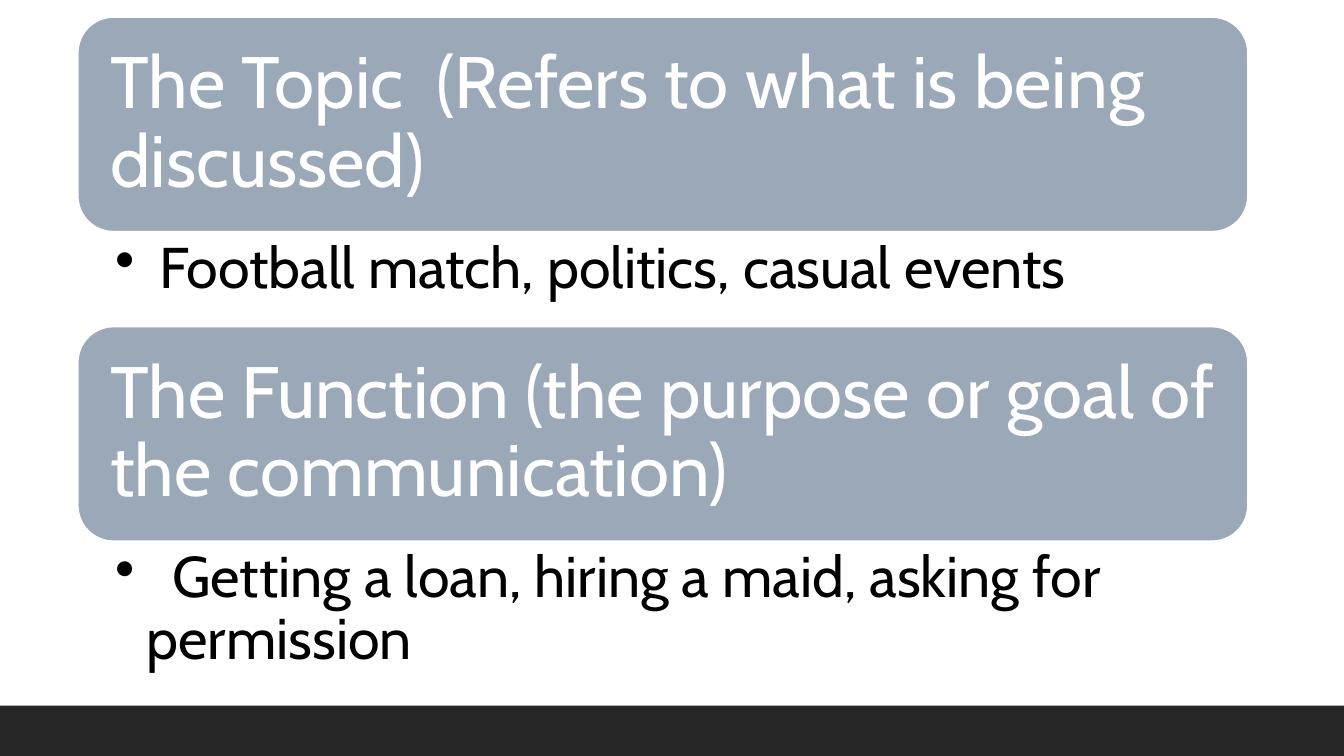
from dataclasses import dataclass

from lxml import etree
from pptx import Presentation
from pptx.dml.color import RGBColor
from pptx.enum.shapes import MSO_SHAPE
from pptx.enum.text import MSO_ANCHOR, PP_ALIGN
from pptx.oxml.ns import qn
from pptx.slide import Slide
from pptx.text.text import TextFrame
from pptx.util import Cm, Pt

RECT = MSO_SHAPE.RECTANGLE
ROUND = MSO_SHAPE.ROUNDED_RECTANGLE
TOP = MSO_ANCHOR.TOP
MIDDLE = MSO_ANCHOR.MIDDLE
LEFT = PP_ALIGN.LEFT


@dataclass(frozen=True)
class Theme:
    font: str = "Cabin"
    head_size: int = 52
    body_size: int = 41
    white: RGBColor = RGBColor(0xFF, 0xFF, 0xFF)
    black: RGBColor = RGBColor(0, 0, 0)
    panel: RGBColor = RGBColor(0x9B, 0xA8, 0xB7)
    footer: RGBColor = RGBColor(0x26, 0x26, 0x26)


@dataclass(frozen=True)
class Section:
    head: str
    body: str
    depth: float  # height of the body text in cm


THEME = Theme()
WIDE, HIGH = 33.87, 19.05
BAR = 1.27
SIDE, SPAN = 1.96, 29.49
START, PANEL = 0.43, 5.41
HANG = 0.79

SECTIONS = [
    Section("The Topic  (Refers to what is being discussed)",
            " Football match, politics, casual events", 2.39),
    Section("The Function (the purpose or goal of the communication)",
            "  Getting a loan, hiring a maid, asking for permission", 3.35),
]


def set_text(frame: TextFrame, text: str, size: int, color: RGBColor,
             anchor: MSO_ANCHOR, pads: tuple[float, float, float]) -> None:
    """Fill a frame; pads are left, right and vertical in cm."""
    left, right, edge = pads
    frame.word_wrap = True
    frame.vertical_anchor = anchor
    frame.margin_left, frame.margin_right = Cm(left), Cm(right)
    frame.margin_top = frame.margin_bottom = Cm(edge)
    frame.text = text
    para = frame.paragraphs[0]
    para.alignment = LEFT
    para.line_spacing = 0.9
    font = para.runs[0].font
    font.name, font.size = THEME.font, Pt(size)
    font.color.rgb = color


def add_bullet(frame: TextFrame) -> None:
    props = frame.paragraphs[0]._p.get_or_add_pPr()
    props.set("marL", str(Cm(HANG)))
    props.set("indent", str(-Cm(HANG)))
    etree.SubElement(props, qn("a:buChar")).set("char", "•")


def add_bar(slide: Slide) -> None:
    bar = slide.shapes.add_shape(RECT, 0, Cm(HIGH - BAR), Cm(WIDE), Cm(BAR))
    bar.shadow.inherit = False
    bar.fill.solid()
    bar.fill.fore_color.rgb = THEME.footer
    bar.line.fill.background()


def add_section(slide: Slide, part: Section, top: float) -> float:
    """Draw a panel with its bullet and return the next top in cm."""
    panel = slide.shapes.add_shape(ROUND, Cm(SIDE), Cm(top), Cm(SPAN), Cm(PANEL))
    panel.shadow.inherit = False
    panel.fill.solid()
    panel.fill.fore_color.rgb = THEME.panel
    panel.line.color.rgb = THEME.white
    panel.line.width = Pt(1.25)
    set_text(panel.text_frame, part.head, THEME.head_size, THEME.white,
             MIDDLE, (0.56, 0.56, 0.56))

    top += PANEL
    box = slide.shapes.add_textbox(Cm(SIDE), Cm(top), Cm(SPAN), Cm(part.depth))
    set_text(box.text_frame, part.body, THEME.body_size, THEME.black,
             TOP, (0.94, 1.02, 0.18))
    add_bullet(box.text_frame)
    return top + part.depth


def main() -> None:
    deck = Presentation()
    deck.slide_width, deck.slide_height = Cm(WIDE), Cm(HIGH)
    slide = deck.slides.add_slide(deck.slide_layouts[6])

    # Footer band
    add_bar(slide)

    # Stacked sections
    top = START
    for part in SECTIONS:
        top = add_section(slide, part, top)

    deck.save("out.pptx")


if __name__ == "__main__":
    main()
